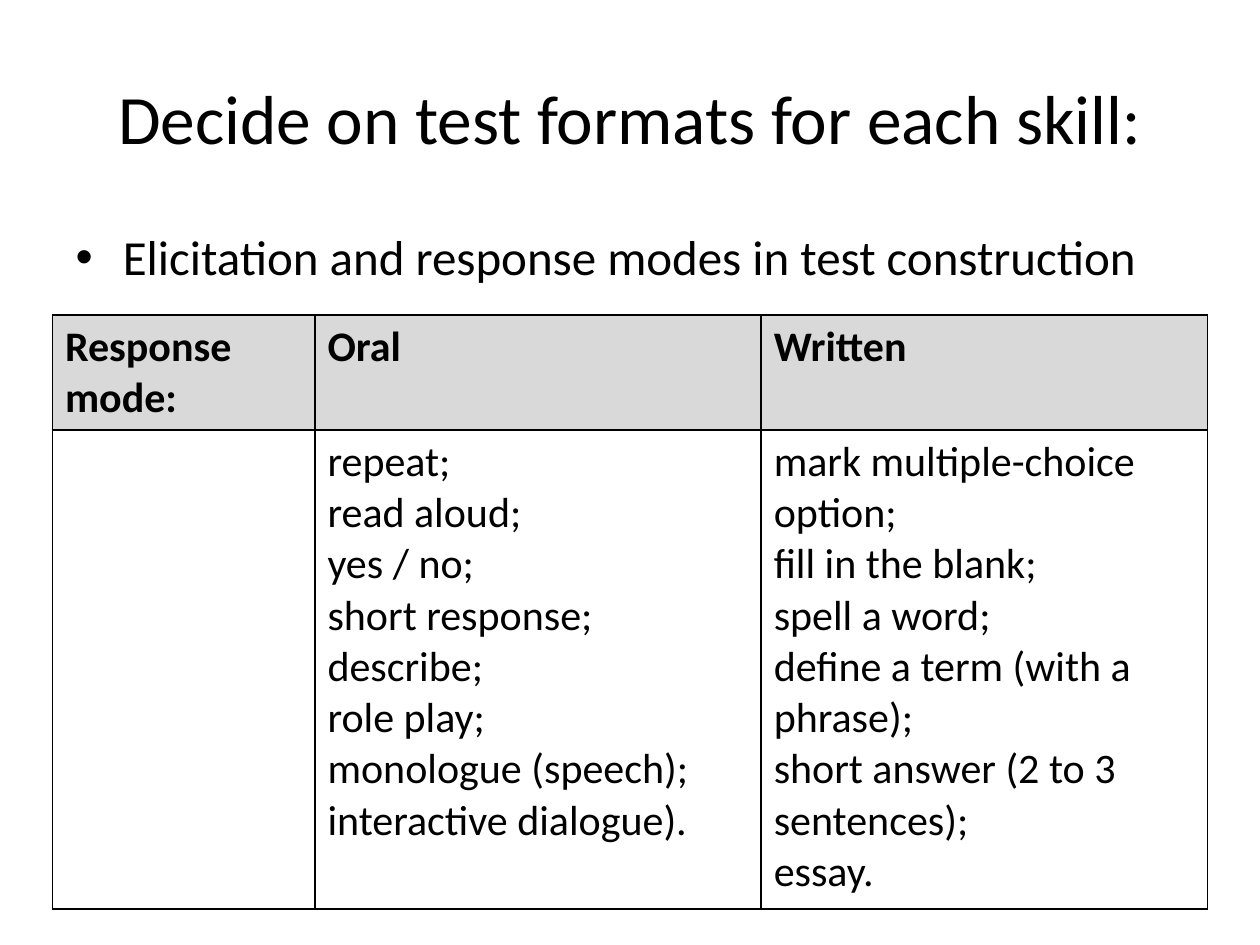
from lxml.etree import SubElement
from pptx import Presentation
from pptx.dml.color import RGBColor
from pptx.enum.text import MSO_ANCHOR, PP_ALIGN
from pptx.oxml.ns import qn
from pptx.util import Pt

COLORS = {"text": "000000", "border": "000000", "header": "D9D9D9", "cell": "FFFFFF"}
FONTS = {
    "title": {"name": "Calibri", "size": Pt(39.6), "bold": False},
    "bullet": {"name": "Calibri", "size": Pt(28), "bold": False},
    "header": {"name": "Calibri", "size": Pt(24), "bold": True},
    "cell": {"name": "Calibri", "size": Pt(24), "bold": False},
}
COLUMN_WIDTHS = [150, 255, 255]
ROW_HEIGHTS = [44.6, 273.6]
RESPONSE_MODES = [
    [["Response mode:"], ["Oral"], ["Written"]],
    [
        [],
        ["repeat;", "read aloud;", "yes / no;", "short response;", "describe;",
         "role play;", "monologue (speech);", "interactive dialogue)."],
        ["mark multiple-choice option;", "fill in the blank;", "spell a word;",
         "define a term (with a phrase);", "short answer (2 to 3 sentences);", "essay."],
    ],
]


def write_lines(text_frame, lines, style):
    """Write one paragraph per line in the named style."""
    text_frame.text = "\n".join(lines)
    for paragraph in text_frame.paragraphs:
        for font in [paragraph.font] + [run.font for run in paragraph.runs]:
            for attribute, value in FONTS[style].items():
                setattr(font, attribute, value)
            font.color.rgb = RGBColor.from_string(COLORS["text"])


def place(shape, box):
    """Move a shape to a box of left, top, width and height in points."""
    for attribute, value in zip(("left", "top", "width", "height"), box):
        setattr(shape, attribute, Pt(value))


def add_title(slide, box, text):
    """Fill the title placeholder, centred in its box."""
    title = slide.shapes.title
    place(title, box)
    write_lines(title.text_frame, [text], "title")
    title.text_frame.vertical_anchor = MSO_ANCHOR.MIDDLE
    title.text_frame.paragraphs[0].alignment = PP_ALIGN.CENTER


def add_bullets(slide, box, lines):
    """Fill the body placeholder with its bulleted list."""
    body = slide.placeholders[1]
    place(body, box)
    write_lines(body.text_frame, lines, "bullet")


def set_borders(cell):
    """Draw a thin line on all four sides of a cell."""
    properties = cell._tc.get_or_add_tcPr()
    for position, side in enumerate(("a:lnL", "a:lnR", "a:lnT", "a:lnB")):
        line = SubElement(properties, qn(side), w=str(Pt(1)))
        properties.insert(position, line)
        fill = SubElement(line, qn("a:solidFill"))
        SubElement(fill, qn("a:srgbClr"), val=COLORS["border"])


def add_mode_table(slide, box, rows):
    """Add the table of response modes with a shaded header row."""
    left, top, width, height = map(Pt, box)
    frame = slide.shapes.add_table(len(rows), len(rows[0]), left, top, width, height)
    table = frame.table
    for column, column_width in zip(table.columns, COLUMN_WIDTHS):
        column.width = Pt(column_width)
    for row, row_height in zip(table.rows, ROW_HEIGHTS):
        row.height = Pt(row_height)
    for row_index, row_texts in enumerate(rows):
        style = "cell" if row_index else "header"
        for column_index, lines in enumerate(row_texts):
            cell = table.cell(row_index, column_index)
            write_lines(cell.text_frame, lines, style)
            cell.fill.solid()
            cell.fill.fore_color.rgb = RGBColor.from_string(COLORS[style])
            set_borders(cell)
    place(frame, box)


def main():
    """Build the slide and save it."""
    presentation = Presentation()
    presentation.slide_width, presentation.slide_height = Pt(720), Pt(540)
    slide = presentation.slides.add_slide(presentation.slide_layouts[1])
    add_title(slide, (36, 21.6, 648, 90), "Decide on test formats for each skill:")
    add_bullets(slide, (36, 126, 648, 356.4),
                ["Elicitation and response modes in test construction"])
    add_mode_table(slide, (30, 180, 660, 338.4), RESPONSE_MODES)
    presentation.save("out.pptx")


if __name__ == "__main__":
    main()
